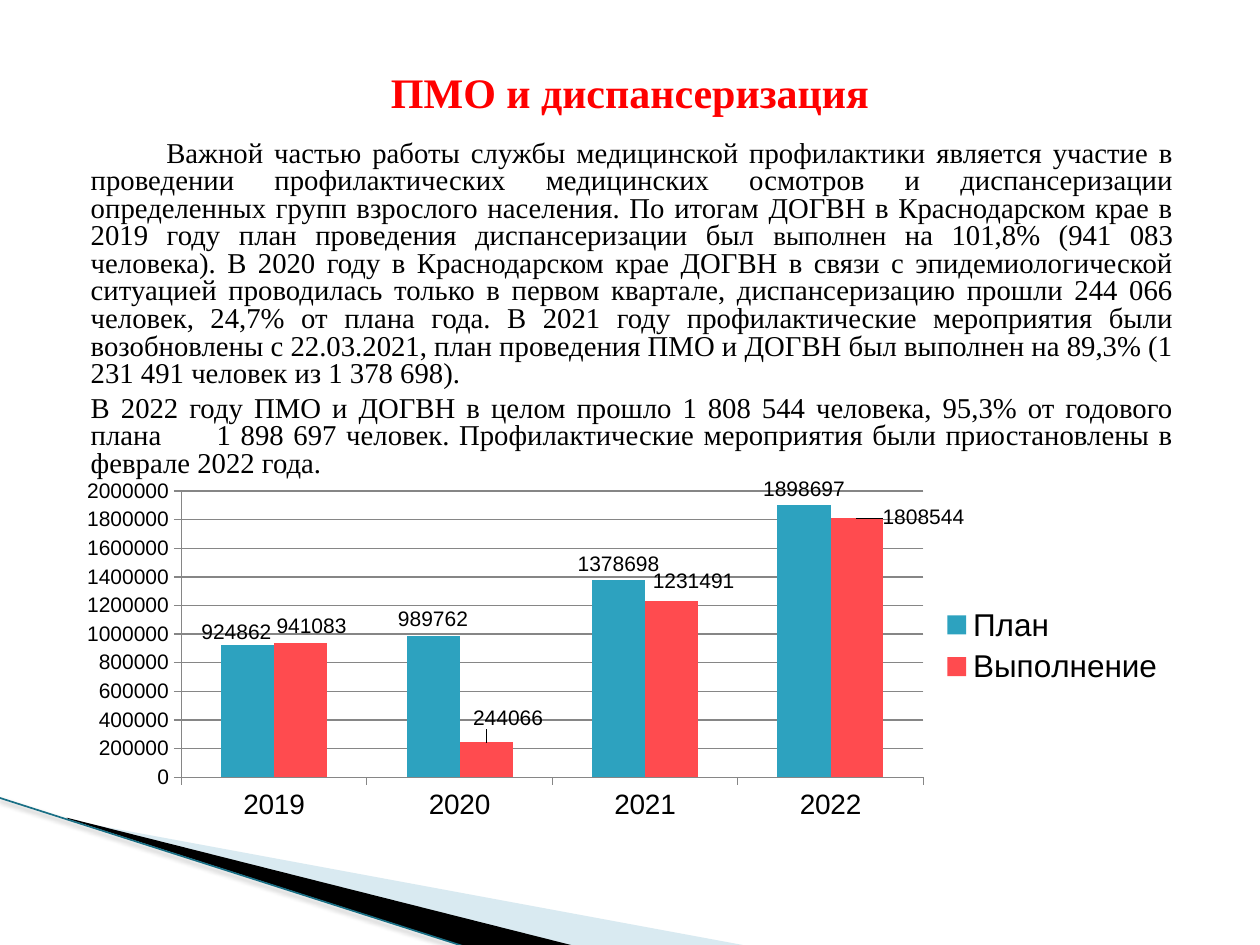
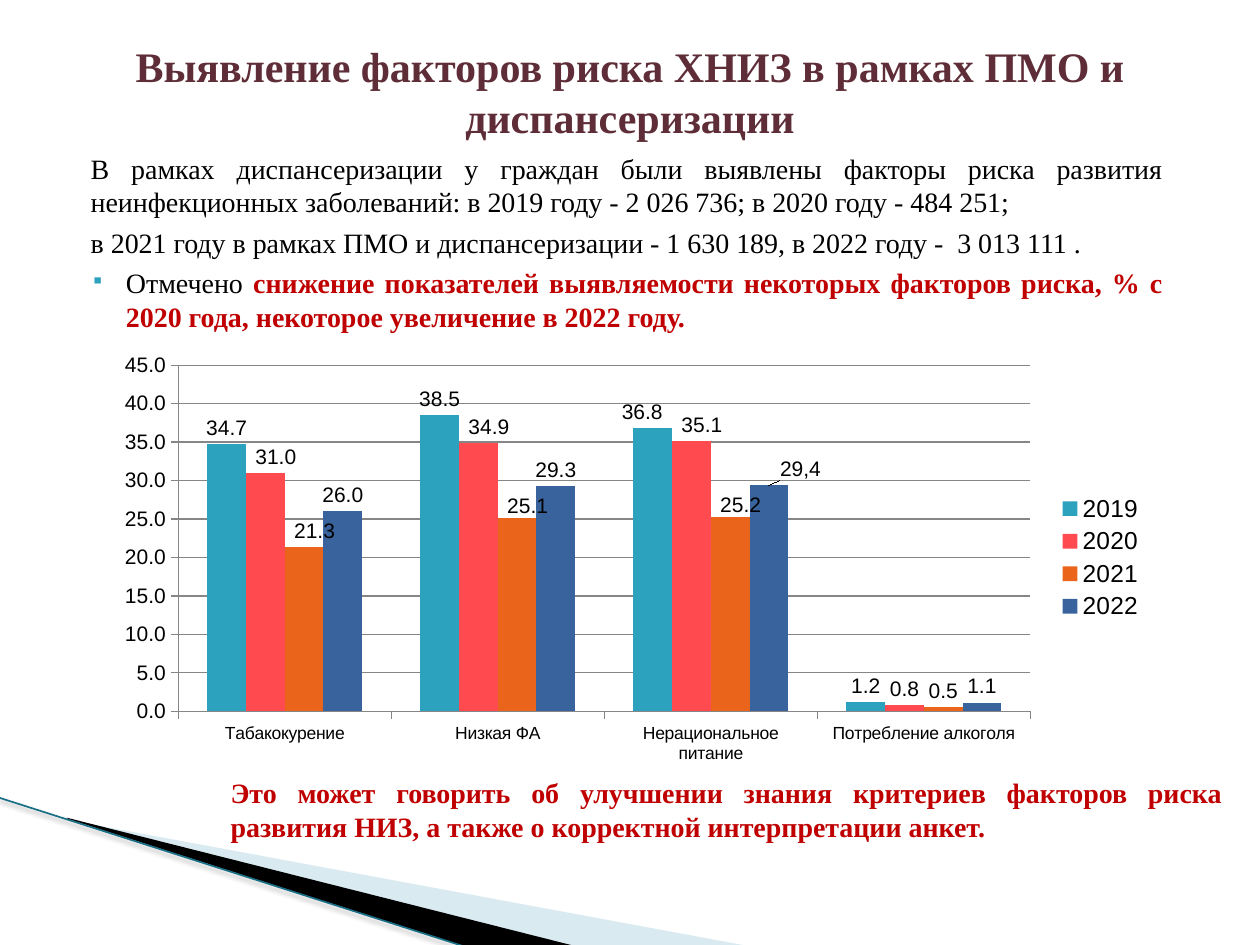
from lxml import etree
from pptx import Presentation
from pptx.chart.data import CategoryChartData
from pptx.dml.color import RGBColor
from pptx.enum.chart import XL_CHART_TYPE as ChartType
from pptx.enum.chart import XL_LABEL_POSITION as LabelPos
from pptx.enum.chart import XL_LEGEND_POSITION as LegendPos
from pptx.enum.chart import XL_TICK_MARK as Tick
from pptx.enum.shapes import MSO_CONNECTOR as Connector
from pptx.enum.text import MSO_ANCHOR as Anchor
from pptx.enum.text import PP_ALIGN as Align
from pptx.oxml import parse_xml
from pptx.oxml.ns import nsdecls, qn
from pptx.util import Inches, Pt

# Shared look
SERIF, SANS = "Times New Roman", "Arial"
BLACK, GRID, RED, TEAL = "000000", "868686", "C00000", "2DA2BF"
SERIES_COLORS = [TEAL, "FF4B4F", "EB641B", "39639D"]
BANDS = [  # outline, colour, opacity in %
    ([(0.55, 6.51), (5.95, 7.51), (4.56, 7.51), (0.55, 6.5)], "A0CBDC", 40),
    ([(0.53, 6.49), (4.57, 7.51), (3.72, 7.52), (0.54, 6.5)], BLACK, 100),
]
EDGE = (-0.01, 6.33, 3.71, 7.52)

# Content: a paragraph is a dict whose runs are (text, font overrides)
SLIDES = [
    {
        "title": ("ПМО и диспансеризация", "FF0000"),
        "texts": [{
            "at": (0.5, 1.07, 8.91, 2.76), "size": 16.4, "spacing": 0.8,
            "paragraphs": [
                {"first": 0.6, "runs": [
                    ("Важной частью работы службы медицинской профилактики является участие в "
                     "проведении профилактических медицинских осмотров и диспансеризации "
                     "определенных групп взрослого населения. По итогам ДОГВН в Краснодарском "
                     "крае в 2019 году план проведения диспансеризации был ", {}),
                    ("выполнен", {"size": 15.5}),
                    (" на 101,8% (941 083 человека). В 2020 году в Краснодарском крае ДОГВН в "
                     "связи с эпидемиологической ситуацией проводилась только в первом квартале, "
                     "диспансеризацию прошли 244 066 человек, 24,7% от плана года. В 2021 году "
                     "профилактические мероприятия были возобновлены с 22.03.2021, план "
                     "проведения ПМО и ДОГВН был выполнен на 89,3% (1 231 491 человек из "
                     "1 378 698).", {})]},
                {"tab": 1.26, "runs": [
                    ("В 2022 году ПМО и ДОГВН в целом прошло 1 808 544 человека, 95,3% от "
                     "годового плана\t1 898 697 человек. Профилактические мероприятия были "
                     "приостановлены в феврале 2022 года.", {})]},
            ],
        }],
        "chart": {
            "at": (0.56, 3.59, 8.79, 3.07), "plot": (0.1, 0.1, 0.67, 0.74),
            "format": "General", "max": 2000000, "step": 200000,
            "cat_size": 16, "legend_size": 18,
            "cats": ["2019", "2020", "2021", "2022"],
            "series": {
                "План": [924862, 989762, 1378698, 1898697],
                "Выполнение": [941083, 244066, 1231491, 1808544],
            },
            # (series, point): label shift as a share of the chart
            "shifts": {(0, 0): (-0.01, 0.01), (1, 0): (0.01, 0), (1, 1): (0.02, -0.02),
                       (1, 2): (0.02, -0.01), (1, 3): (0.06, 0.04)},
            "custom": {},
        },
    },
    {
        "title": ("Выявление факторов риска ХНИЗ в рамках ПМО и диспансеризации", "5E2D37"),
        "texts": [
            {"at": (0.5, 1.15, 8.83, 1.57), "size": 16, "paragraphs": [
                {"runs": [
                    ("В рамках диспансеризации у граждан были выявлены факторы риска развития "
                     "неинфекционных заболеваний: в 2019 году - 2 026 736; в 2020 году - "
                     "484 251;", {})]},
                {"runs": [
                    ("в 2021 году в рамках ПМО и диспансеризации - 1 630 189, в 2022 году -  "
                     "3 013 111 .", {})]},
                {"bullet": "▪", "left": 0.28, "first": -0.28, "runs": [
                    ("Отмечено ", {}),
                    ("снижение показателей выявляемости некоторых факторов риска, % с 2020 "
                     "года, некоторое увеличение в 2022 году.", {"color": RED, "bold": True})]},
            ]},
            {"at": (1.61, 6.11, 8.19, 0.64), "size": 16, "color": RED, "bold": True,
             "paragraphs": [{"runs": [
                 ("Это может говорить об улучшении знания критериев факторов риска развития "
                  "НИЗ, а также о корректной интерпретации анкет.", {})]}]},
        ],
        "chart": {
            "at": (0.83, 2.73, 8.35, 3.39), "plot": (0.07, 0.05, 0.81, 0.81),
            "format": "0.0", "max": 45, "step": 5, "cat_size": 10, "legend_size": 14,
            "cats": ["Табакокурение", "Низкая ФА", "Нерациональное питание",
                     "Потребление алкоголя"],
            "series": {
                "2019": [34.7, 38.5, 36.8, 1.2],
                "2020": [31, 34.9, 35.1, 0.8],
                "2021": [21.3, 25.1, 25.2, 0.5],
                "2022": [26, 29.3, 29.4, 1.1],
            },
            "shifts": {(0, 2): (-0.01, 0), (1, 0): (0.01, 0), (1, 1): (0.01, 0),
                       (1, 2): (0.01, 0), (2, 0): (0.01, 0), (2, 1): (0.01, 0.01),
                       (2, 2): (0.01, 0.01), (3, 2): (0.03, 0)},
            "custom": {(3, 2): "29,4"},
        },
    },
]


def rgb(value):
    return RGBColor.from_string(value)


def set_font(font, size=None, color=None, bold=None, name=None):
    if size:
        font.size = Pt(size)
    if color:
        font.color.rgb = rgb(color)
    if bold is not None:
        font.bold = bold
    if name:
        font.name = name


def add_xml(parent, tag, **attrs):
    return etree.SubElement(parent, qn(tag), {k: str(v) for k, v in attrs.items()})


# Corner decoration
def add_bands(slide):
    for points, color, opacity in BANDS:
        start, *rest = [(Inches(x), Inches(y)) for x, y in points]
        builder = slide.shapes.build_freeform(*start)
        builder.add_line_segments(rest)
        sp = builder.convert_to_shape()
        sp.shadow.inherit = False
        sp.fill.solid()
        sp.fill.fore_color.rgb = rgb(color)
        sp.line.fill.background()
        if opacity < 100:
            fill = sp._element.spPr.find(qn("a:solidFill"))
            add_xml(fill[0], "a:alpha", val=opacity * 1000)

    line = slide.shapes.add_connector(Connector.STRAIGHT, *[Inches(v) for v in EDGE])
    line.line.color.rgb = rgb("196F85")
    line.line.width = Pt(0.95)
    effects = add_xml(line._element.spPr, "a:effectLst")
    shadow = add_xml(effects, "a:outerShdw", blurRad=Pt(3.1), dist=Pt(1.6), dir=90 * 60000)
    add_xml(add_xml(shadow, "a:srgbClr", val=BLACK), "a:alpha", val=38000)


def set_title(slide, text, color):
    sp = slide.shapes.title
    sp.left, sp.top, sp.width, sp.height = [Inches(v) for v in (0.5, 0.3, 9, 0.85)]
    tf = sp.text_frame
    tf.text = text
    tf.vertical_anchor = Anchor.MIDDLE
    p = tf.paragraphs[0]
    p.alignment = Align.CENTER
    set_font(p.font, 24, color, True, SERIF)


def add_text(slide, at, size, paragraphs, spacing=1.0, color=BLACK, bold=False):
    tf = slide.shapes.add_textbox(*[Inches(v) for v in at]).text_frame
    tf.word_wrap = True
    tf.margin_left = Inches(0.22)
    for i, item in enumerate(paragraphs):
        p = tf.add_paragraph() if i else tf.paragraphs[0]
        p.alignment = Align.JUSTIFY
        p.line_spacing = spacing
        p.space_before = Pt(4 if i else 0)
        pPr = p._p.get_or_add_pPr()
        pPr.set("marL", str(Inches(item.get("left", 0))))
        pPr.set("indent", str(Inches(item.get("first", 0))))
        if "bullet" in item:
            add_xml(add_xml(pPr, "a:buClr"), "a:srgbClr", val=TEAL)
            add_xml(pPr, "a:buSzPct", val=68000)
            add_xml(pPr, "a:buChar", char=item["bullet"])
        if "tab" in item:
            add_xml(add_xml(pPr, "a:tabLst"), "a:tab", pos=Inches(item["tab"]), algn="l")
        set_font(p.font, size, color, bold, SERIF)
        for text, overrides in item["runs"]:
            r = p.add_run()
            r.text = text
            set_font(r.font, **overrides)


def manual_layout(inner=False, **values):
    parts = '<c:layoutTarget val="inner"/>' if inner else ""
    if inner:
        parts += '<c:xMode val="edge"/><c:yMode val="edge"/>'
    parts += "".join(f'<c:{k} val="{v}"/>' for k, v in values.items())
    return parse_xml(f'<c:layout {nsdecls("c")}><c:manualLayout>{parts}'
                     "</c:manualLayout></c:layout>")


def add_column_chart(slide, spec_):
    data = CategoryChartData(number_format=spec_["format"])
    data.categories = spec_["cats"]
    for name, values in spec_["series"].items():
        data.add_series(name, values)
    at = [Inches(v) for v in spec_["at"]]
    chart = slide.shapes.add_chart(ChartType.COLUMN_CLUSTERED, *at, data).chart
    set_font(chart.font, 18, BLACK, name=SANS)
    chart.has_title = False
    chart.has_legend = True
    chart.legend.position = LegendPos.RIGHT
    chart.legend.include_in_layout = False
    set_font(chart.legend.font, spec_["legend_size"], BLACK, name=SANS)

    # Plot area and axes
    area = chart._chartSpace.chart.plotArea
    for old in area.findall(qn("c:layout")):
        area.remove(old)
    area.insert(0, manual_layout(True, **dict(zip("xywh", spec_["plot"]))))
    values, cats = chart.value_axis, chart.category_axis
    for axis, size in ((values, 12), (cats, spec_["cat_size"])):
        axis.major_tick_mark = Tick.OUTSIDE
        axis.minor_tick_mark = Tick.NONE
        axis.format.line.color.rgb = rgb(GRID)
        set_font(axis.tick_labels.font, size, BLACK, name=SANS)
    values.minimum_scale, values.maximum_scale = 0, spec_["max"]
    values.major_unit = spec_["step"]
    values.has_major_gridlines = True
    values.major_gridlines.format.line.color.rgb = rgb(GRID)
    values.tick_labels.number_format = spec_["format"]
    values.tick_labels.number_format_is_linked = False

    # Columns and their labels
    plot = chart.plots[0]
    plot.gap_width, plot.overlap = 150, 0
    plot.vary_by_categories = False
    for series, color in zip(plot.series, SERIES_COLORS):
        series.format.fill.solid()
        series.format.fill.fore_color.rgb = rgb(color)
        labels = series.data_labels
        labels.show_value = True
        labels.position = LabelPos.OUTSIDE_END
        labels.number_format = spec_["format"]
        labels.number_format_is_linked = False
        set_font(labels.font, 12, BLACK, name=SANS)
    for (s, i), (dx, dy) in spec_["shifts"].items():
        label = plot.series[s].points[i].data_label
        if (s, i) in spec_["custom"]:
            label.text_frame.text = spec_["custom"][s, i]
            font = label.text_frame.paragraphs[0].runs[0].font
        else:
            font = label.font
        set_font(font, 12, BLACK, name=SANS)
        label.position = LabelPos.OUTSIDE_END
        label._get_or_add_dLbl().insert(1, manual_layout(x=dx, y=dy))


def main():
    prs = Presentation()
    prs.slide_width, prs.slide_height = Inches(10), Inches(7.5)
    for content in SLIDES:
        slide = prs.slides.add_slide(prs.slide_layouts[5])
        add_bands(slide)
        set_title(slide, *content["title"])
        add_column_chart(slide, content["chart"])
        for text in content["texts"]:
            add_text(slide, **text)
    prs.save("out.pptx")


if __name__ == "__main__":
    main()
